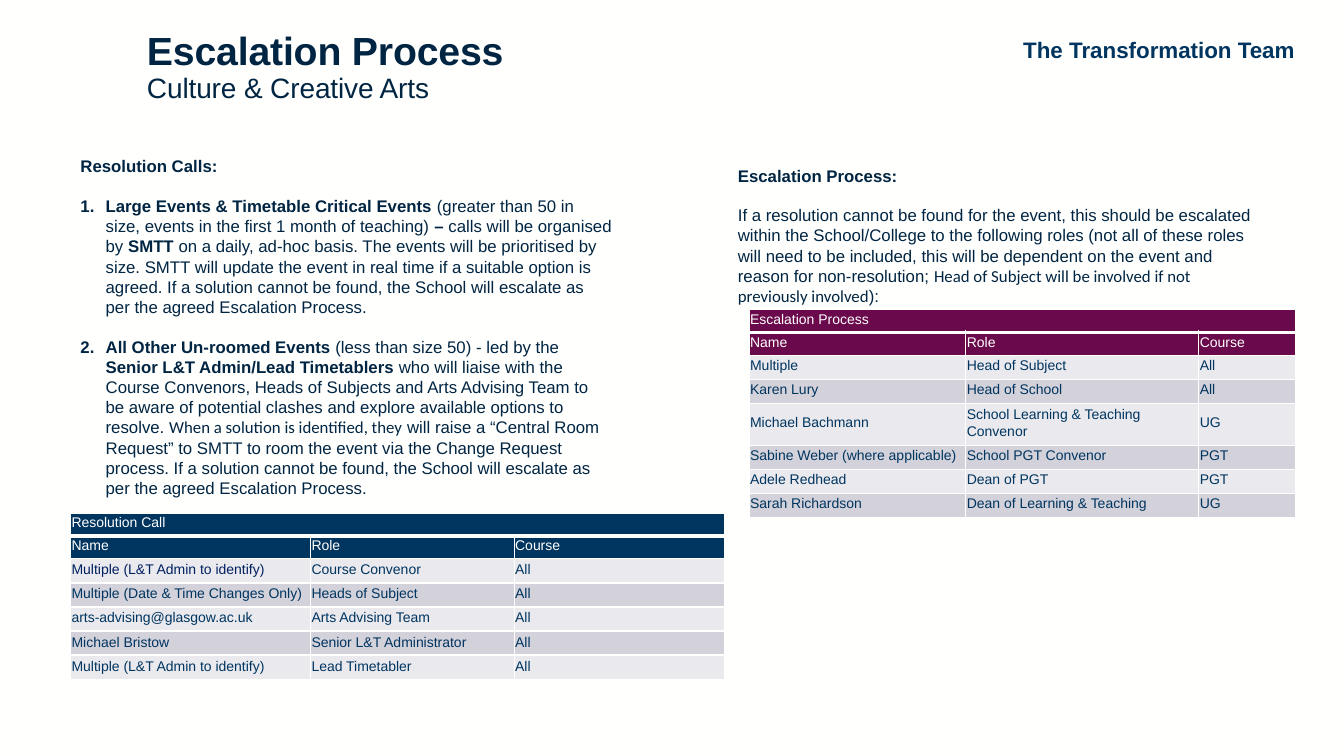
from lxml import etree
from pptx import Presentation
from pptx.dml.color import RGBColor
from pptx.enum.text import MSO_ANCHOR as Anchor, MSO_AUTO_SIZE as AutoSize, PP_ALIGN as Align
from pptx.oxml.ns import qn
from pptx.util import Inches, Pt

OFF_WHITE, NAVY, BLUE, PLUM = "FFFFFE", "002542", "00355F", "6A094B"
BANDS = ("EAE9EE", "D3D1DA")

# A run is (text, bold) or (text, bold, font); a line is (runs, options).
TEAM = [([("The Transformation Team", True)], {"align": Align.CENTER})]
RESOLUTION_TEXT = [
    ([("Resolution Calls:", True)], {}),
    ([("Large Events & Timetable Critical Events ", True),
      ("(greater than 50 in size, events in the first 1 month of teaching) ", False),
      ("– ", True),
      ("calls will be organised by ", False),
      ("SMTT ", True),
      ("on a daily, ad-hoc basis. The events will be prioritised by size. SMTT will update "
       "the event in real time if a suitable option is agreed. If a solution cannot be found, "
       "the School will escalate as per the agreed Escalation Process.", False)],
     {"numbered": True, "before": 14}),
    ([("All Other Un-roomed Events ", True),
      ("(less than size 50) - led by the ", False),
      ("Senior L&T Admin/Lead Timetablers ", True),
      ("who will liaise with the Course Convenors, Heads of Subjects and Arts Advising Team to "
       "be aware of potential clashes and explore available options to resolve. ", False),
      ("When a solution is identified, they", False, "Calibri"),
      (" will raise a “Central Room Request” to SMTT to room the event via the Change Request "
       "process. If a solution cannot be found, the School will escalate as per the agreed "
       "Escalation Process.", False)],
     {"numbered": True, "before": 14}),
]
ESCALATION_TEXT = [
    ([("Escalation Process: ", True)], {}),
    ([("If a resolution cannot be found for the event, this should be escalated within the "
       "School/College to the following roles (not all of these roles will need to be included, "
       "this will be dependent on the event and reason for non-resolution; ", False),
      ("Head of Subject will be involved if not previously involved", False, "Calibri"),
      ("):", False)],
     {"before": 14}),
]
HEADINGS = ("Name", "Role", "Course")
RESOLUTION_ROWS = [
    ("Multiple (L&T Admin to identify)", "Course Convenor", "All"),
    ("Multiple (Date & Time Changes Only)", "Heads of Subject", "All"),
    ("arts-advising@glasgow.ac.uk", "Arts Advising Team", "All"),
    ("Michael Bristow", "Senior L&T Administrator", "All"),
    ("Multiple (L&T Admin to identify)", "Lead Timetabler", "All"),
]
ESCALATION_ROWS = [
    ("Multiple", "Head of Subject", "All"),
    ("Karen Lury", "Head of School", "All"),
    ("Michael Bachmann", "School Learning & Teaching Convenor", "UG"),
    ("Sabine Weber (where applicable)", "School PGT Convenor", "PGT"),
    ("Adele Redhead", "Dean of PGT", "PGT"),
    ("Sarah Richardson", "Dean of Learning & Teaching", "UG"),
]


def color(value):
    return RGBColor.from_string(value)


def add_run(paragraph, text, size, value, bold=False, font="Arial"):
    run = paragraph.add_run()
    run.text = text
    run.font.size, run.font.bold, run.font.name = Pt(size), bold, font
    run.font.color.rgb = color(value)
    return run


def add_box(slide, box):
    frame = slide.shapes.add_textbox(*map(Inches, box)).text_frame
    frame.word_wrap = True
    return frame


def number(paragraph):
    """Give the paragraph a hanging automatic number."""
    properties = paragraph._p.get_or_add_pPr()
    properties.set("marL", str(Inches(0.25)))
    properties.set("indent", str(Inches(-0.25)))
    etree.SubElement(properties, qn("a:buFont"), typeface="+mj-lt")
    etree.SubElement(properties, qn("a:buAutoNum"), type="arabicPeriod")


def add_text(slide, box, lines, size, value):
    frame = add_box(slide, box)
    frame.auto_size = AutoSize.SHAPE_TO_FIT_TEXT
    for index, (runs, options) in enumerate(lines):
        paragraph = frame.add_paragraph() if index else frame.paragraphs[0]
        if options.get("numbered"):
            number(paragraph)
        if "before" in options:
            paragraph.space_before = Pt(options["before"])
        paragraph.alignment = options.get("align")
        for text, bold, *font in runs:
            add_run(paragraph, text, size, value, bold, *font)


def add_title(slide):
    frame = add_box(slide, (1.36, 0.09, 4.23, 1.17))
    frame.vertical_anchor = Anchor.MIDDLE
    paragraph = frame.paragraphs[0]
    paragraph.line_spacing = 0.9
    heading = add_run(paragraph, "Escalation Process", 28, NAVY, True)
    paragraph.add_line_break()
    subject = add_run(paragraph, "Culture & Creative Arts", 20, NAVY)
    for run in (heading, subject):
        run.font._element.set("spc", "-10")


def set_borders(cell, top, bottom):
    properties = cell._tc.get_or_add_tcPr()
    for side, width in (("L", 1), ("R", 1), ("T", top), ("B", bottom)):
        line = etree.SubElement(properties, qn(f"a:ln{side}"), w=str(Pt(width)))
        fill = etree.SubElement(line, qn("a:solidFill"))
        etree.SubElement(fill, qn("a:srgbClr"), val=OFF_WHITE)


def add_contacts(slide, box, widths, title, rows, head_fill, body_anchor, accents):
    """Add a table with a merged title row, a heading row and banded contacts."""
    grid = [(title, "", ""), HEADINGS, *rows]
    table = slide.shapes.add_table(len(grid), len(widths), *map(Inches, box)).table
    table.first_row = table.horz_banding = False
    for column, width in zip(table.columns, widths):
        column.width = Inches(width)
    for r, texts in enumerate(grid):
        is_head = r < 2
        table.rows[r].height = Inches(0.17 if is_head else 0.18)
        for c, text in enumerate(texts):
            cell = table.cell(r, c)
            cell.margin_left = cell.margin_right = cell.margin_top = Inches(0.01)
            cell.margin_bottom = Inches(0.05)
            cell.vertical_anchor = Anchor.BOTTOM if is_head else body_anchor
            set_borders(cell, 3 if r == 1 else 1, 3 if r == 0 else 1)
            cell.fill.solid()
            cell.fill.fore_color.rgb = color(head_fill if is_head else BANDS[r % 2])
            if not text:
                continue
            paragraph = cell.text_frame.paragraphs[0]
            if not is_head:
                paragraph.line_spacing, paragraph.space_after = 1.07, Pt(8)
            add_run(paragraph, text, 10, "FFFFFF" if is_head else accents.get((r, c), BLUE))
    table.cell(0, 0).merge(table.cell(0, len(widths) - 1))


def main():
    presentation = Presentation()
    presentation.slide_width, presentation.slide_height = Inches(13.33), Inches(7.5)
    slide = presentation.slides.add_slide(presentation.slide_layouts[6])
    slide.background.fill.solid()
    slide.background.fill.fore_color.rgb = color(OFF_WHITE)

    add_text(slide, (9.95, 0.31, 3.09, 0.37), TEAM, 16, BLUE)
    add_title(slide)
    add_contacts(slide, (0.7, 5.09, 6.49, 1.61), (2.38, 2.02, 2.09), "Resolution Call",
                 RESOLUTION_ROWS, BLUE, Anchor.BOTTOM, {(2, 0): "002060"})
    add_contacts(slide, (7.43, 3.07, 5.42, 1.84), (2.15, 2.31, 0.96), "Escalation Process",
                 ESCALATION_ROWS, PLUM, Anchor.MIDDLE, {})
    add_text(slide, (7.22, 1.59, 5.42, 1.51), ESCALATION_TEXT, 12, NAVY)
    add_text(slide, (0.7, 1.5, 5.47, 4.34), RESOLUTION_TEXT, 12, NAVY)
    presentation.save("out.pptx")


if __name__ == "__main__":
    main()
